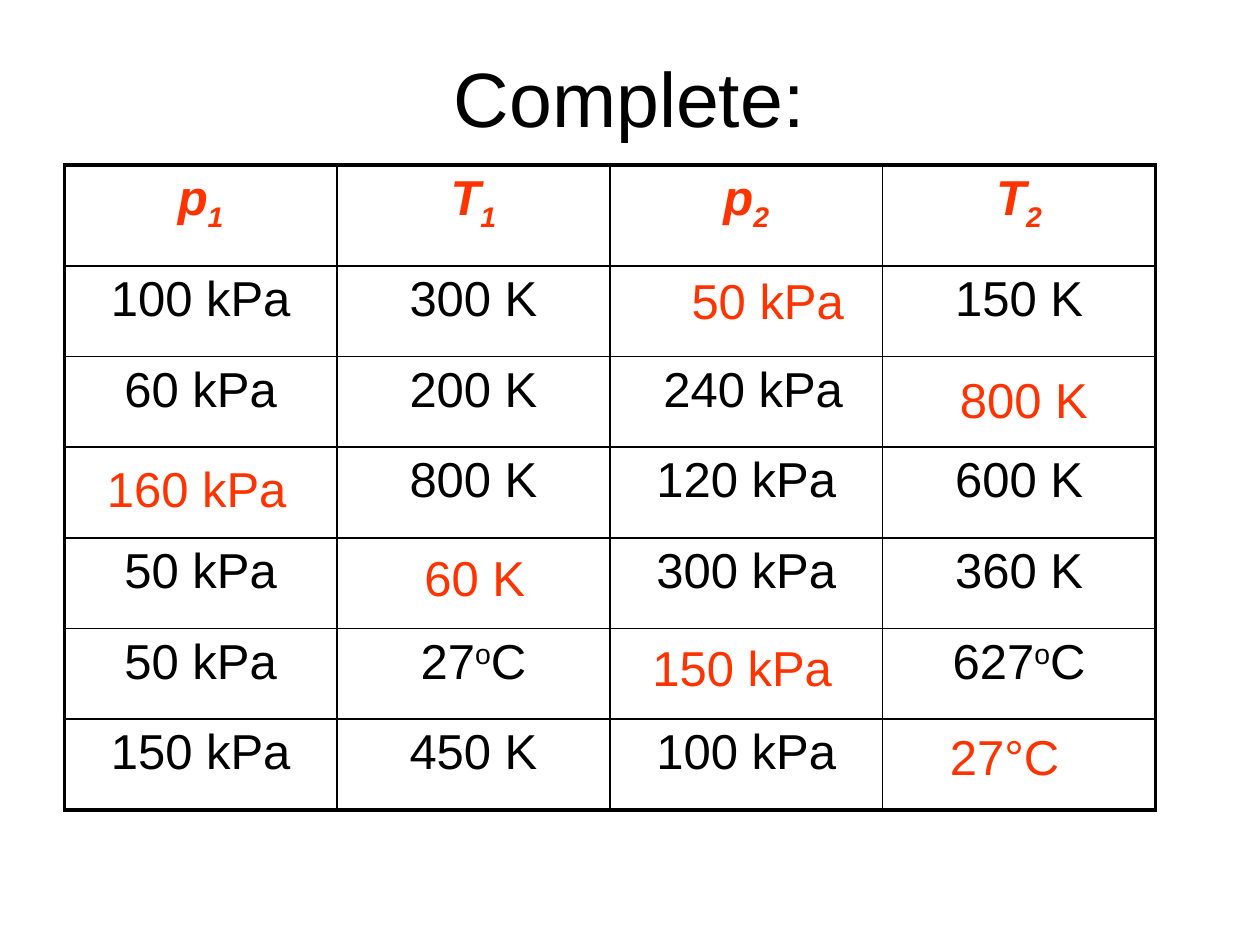
from typing import NamedTuple

from lxml.etree import SubElement
from pptx import Presentation
from pptx.dml.color import RGBColor
from pptx.enum.text import MSO_ANCHOR, PP_ALIGN
from pptx.oxml.ns import qn
from pptx.util import Inches, Pt

BLACK = RGBColor(0x00, 0x00, 0x00)
RED = RGBColor(0xFF, 0x33, 0x00)
FONT = "Arial"
THIN, THICK = Pt(1), Pt(2.25)
SUB, SUPER = -25, 30


class Part(NamedTuple):
    text: str
    baseline: int = 0


class Answer(NamedTuple):
    text: str
    left: float
    top: float
    width: float


def quantity(symbol: str, index: str) -> list[Part]:
    return [Part(symbol), Part(index, SUB)]


def celsius(value: str) -> list[Part]:
    return [Part(value), Part("o", SUPER), Part("C")]


HEADER = [quantity("p", "1"), quantity("T", "1"), quantity("p", "2"), quantity("T", "2")]
ROWS = [
    ["100 kPa", "300 K", "", "150 K"],
    ["60 kPa", "200 K", "240 kPa", ""],
    ["", "800 K", "120 kPa", "600 K"],
    ["50 kPa", "", "300 kPa", "360 K"],
    ["50 kPa", celsius("27"), "", celsius("627")],
    ["150 kPa", "450 K", "100 kPa", ""],
]
ANSWERS = [
    Answer("50 kPa", 5.39, 2.1, 1.5),
    Answer("800 K", 7.52, 2.88, 1.42),
    Answer("160 kPa", 0.75, 3.59, 1.81),
    Answer("60 K", 3.27, 4.3, 1.02),
    Answer("150 kPa", 5.08, 5.01, 1.97),
    Answer("27°C", 7.44, 5.72, 1.46),
]


def style_run(r, size: float, color: RGBColor, emphasis: bool = False) -> None:
    r.font.name = FONT
    r.font.size = Pt(size)
    r.font.color.rgb = color
    r.font.bold = r.font.italic = emphasis


def add_text(slide, text: str, left: float, top: float, width: float, height: float,
             size: float, color: RGBColor, align=PP_ALIGN.LEFT, anchor=MSO_ANCHOR.TOP) -> None:
    sp = slide.shapes.add_textbox(Inches(left), Inches(top), Inches(width), Inches(height))
    tf = sp.text_frame
    tf.word_wrap = True
    tf.vertical_anchor = anchor
    tf.text = text
    p = tf.paragraphs[0]
    p.alignment = align
    style_run(p.runs[0], size, color)


def set_border(cell, side: str, width: int) -> None:
    ln = SubElement(cell._tc.get_or_add_tcPr(), qn(f"a:ln{side}"), w=str(int(width)))
    fill = SubElement(ln, qn("a:solidFill"))
    SubElement(fill, qn("a:srgbClr"), val=str(BLACK))


def fill_cell(cell, content: str | list[Part], header: bool) -> None:
    p = cell.text_frame.paragraphs[0]
    p.alignment = PP_ALIGN.CENTER
    parts = [Part(content)] if isinstance(content, str) else content
    for part in parts:
        if not part.text:
            continue
        r = p.add_run()
        r.text = part.text
        style_run(r, 28, RED if header else BLACK, header)
        if part.baseline:
            r._r.get_or_add_rPr().set("baseline", str(part.baseline * 1000))


def add_grid(slide) -> None:
    data = [HEADER, *ROWS]
    last_row, last_col = len(data) - 1, len(HEADER) - 1
    table = slide.shapes.add_table(len(data), len(HEADER), Inches(0.51), Inches(1.31),
                                   Inches(8.66), Inches(5.12)).table
    table.first_row = table.horz_banding = False
    for i, row in enumerate(data):
        table.rows[i].height = Inches(0.72 if i else 0.8)
        for j, content in enumerate(row):
            cell = table.cell(i, j)
            fill_cell(cell, content, header=i == 0)
            # Thick frame outside, thin lines inside
            outer = {"L": j == 0, "R": j == last_col, "T": i == 0, "B": i == last_row}
            for side, is_outer in outer.items():
                set_border(cell, side, THICK if is_outer else THIN)
            cell.fill.background()
    # The 240 kPa entry sits slightly right of centre
    table.cell(2, 2).margin_left = Inches(0.21)


def main() -> None:
    prs = Presentation()
    prs.slide_width, prs.slide_height = Inches(10), Inches(7.5)
    slide = prs.slides.add_slide(prs.slide_layouts[6])

    # Title
    add_text(slide, "Complete:", 0.5, 0.3, 8.99, 0.93, 44, BLACK,
             PP_ALIGN.CENTER, MSO_ANCHOR.MIDDLE)

    # Exercise table
    add_grid(slide)

    # Answers over the empty cells
    for answer in ANSWERS:
        add_text(slide, answer.text, answer.left, answer.top, answer.width, 0.57, 28, RED)

    prs.save("out.pptx")


if __name__ == "__main__":
    main()
